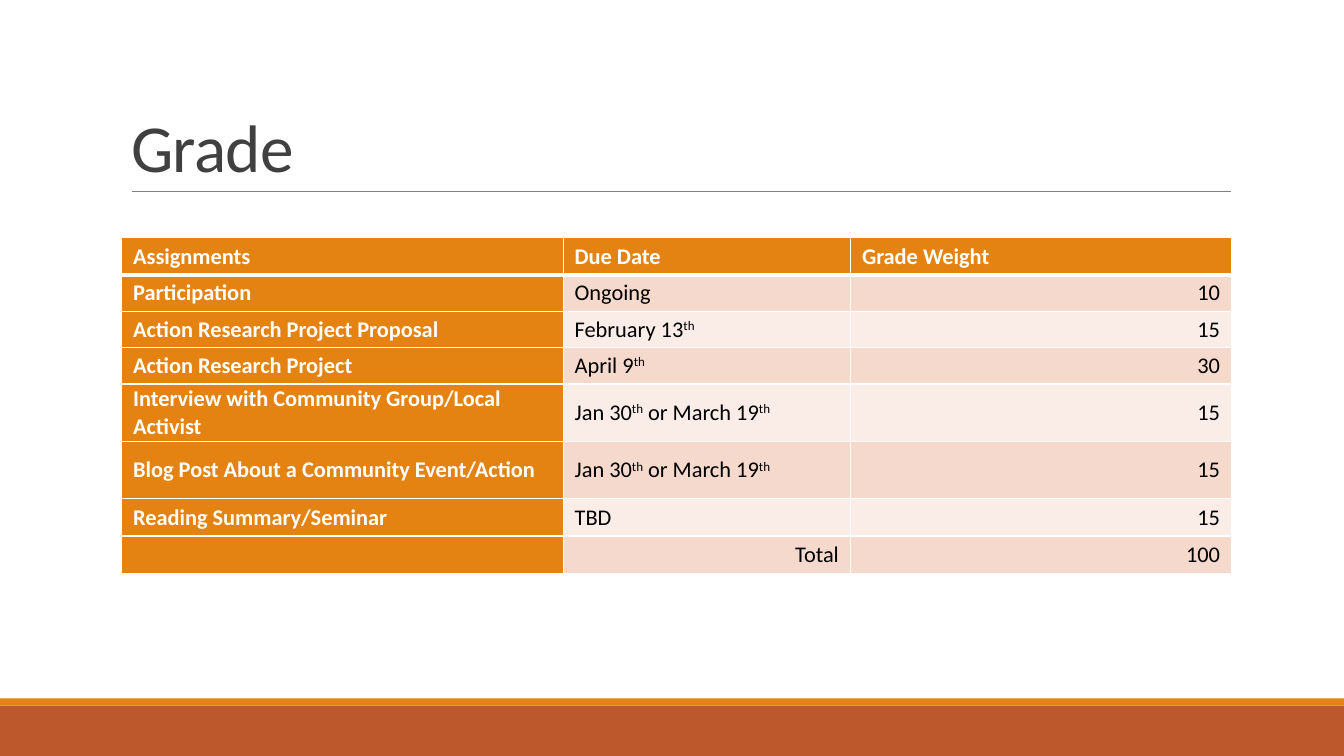
"""Build a slide with a table of assignments, due dates and grade weights."""
from dataclasses import dataclass

from lxml import etree
from pptx import Presentation
from pptx.dml.color import RGBColor
from pptx.enum.shapes import MSO_CONNECTOR, MSO_SHAPE
from pptx.enum.text import MSO_ANCHOR, MSO_AUTO_SIZE, PP_ALIGN
from pptx.oxml.ns import qn
from pptx.util import Inches, Pt

STRAIGHT = MSO_CONNECTOR.STRAIGHT
RECTANGLE = MSO_SHAPE.RECTANGLE
MIDDLE, BOTTOM = MSO_ANCHOR.MIDDLE, MSO_ANCHOR.BOTTOM
NO_AUTOFIT = MSO_AUTO_SIZE.NONE
LEFT, RIGHT = PP_ALIGN.LEFT, PP_ALIGN.RIGHT

ORANGE = RGBColor(0xE4, 0x83, 0x12)
RUST = RGBColor(0xBD, 0x58, 0x2C)
DARK_BAND = RGBColor(0xF5, 0xD9, 0xCC)
LIGHT_BAND = RGBColor(0xFA, 0xED, 0xE7)
TITLE_GREY = RGBColor(0x40, 0x40, 0x40)
RULE_GREY = RGBColor(0x80, 0x80, 0x80)
WHITE = RGBColor(0xFF, 0xFF, 0xFF)
BLACK = RGBColor(0x00, 0x00, 0x00)

FONT = "Calibri"
GRID_COLUMNS, GRID_ROWS = 133.3, 75
TABLE_COLUMNS = (43.8, 28.5, 37.8)
SUPERSCRIPT_MARK = "^"
TITLE_FORMAT = {"name": FONT, "size": Pt(48), "bold": False}
CELL_FORMAT = {"name": FONT, "size": Pt(16)}


@dataclass(frozen=True)
class Band:
    """A full-width strip, placed in grid rows."""
    top: float
    height: float
    color: RGBColor


@dataclass(frozen=True)
class GradeRow:
    """One table row, with its height in grid rows."""
    height: float
    assignment: str
    due: str
    weight: str
    due_align: PP_ALIGN = LEFT
    weight_align: PP_ALIGN = RIGHT


BANDS = (Band(70, 5, RUST), Band(69.3, 0.7, ORANGE))
GRADE_ROWS = (
    GradeRow(3.7, "Assignments", "Due Date", "Grade Weight", weight_align=LEFT),
    GradeRow(3.6, "Participation", "Ongoing", "10"),
    GradeRow(3.6, "Action Research Project Proposal", "February 13^th", "15"),
    GradeRow(3.6, "Action Research Project", "April 9^th", "30"),
    GradeRow(5.7, "Interview with Community Group/Local Activist",
             "Jan 30^th^ or March 19^th", "15"),
    GradeRow(5.7, "Blog Post About a Community Event/Action",
             "Jan 30^th^ or March 19^th", "15"),
    GradeRow(3.7, "Reading Summary/Seminar", "TBD", "15"),
    GradeRow(3.7, "", "Total", "100", due_align=RIGHT),
)


def grid(cells: float) -> int:
    """Turn a count of grid columns or rows into a length."""
    return Inches(cells / 10)


def apply_format(target, values: dict) -> None:
    """Set each named attribute on the target."""
    for name, value in values.items():
        setattr(target, name, value)


def add_band(slide, band: Band) -> None:
    """Draw one strip across the foot of the slide."""
    box = slide.shapes.add_shape(RECTANGLE, 0, grid(band.top),
                                 grid(GRID_COLUMNS), grid(band.height))
    box.shadow.inherit = False
    box.fill.solid()
    box.fill.fore_color.rgb = band.color
    box.line.fill.background()


def add_title_rule(slide) -> None:
    """Draw the thin line under the title."""
    rule = slide.shapes.add_connector(STRAIGHT, grid(13.1), grid(19),
                                      grid(122.1), grid(19))
    rule.line.color.rgb = RULE_GREY
    rule.line.width = Pt(0.5)
    etree.SubElement(rule._element.spPr, qn("a:effectLst"))


def format_title(title) -> None:
    """Place, fill and style the title placeholder."""
    apply_format(title, {"left": grid(12), "top": grid(3.1),
                         "width": grid(110), "height": grid(15.9)})
    frame = title.text_frame
    apply_format(frame, {"text": "Grade", "word_wrap": True,
                         "auto_size": NO_AUTOFIT, "vertical_anchor": BOTTOM})
    para = frame.paragraphs[0]
    apply_format(para, {"alignment": LEFT, "line_spacing": 0.85})
    span = para.runs[0]
    apply_format(span.font, TITLE_FORMAT)
    span.font.color.rgb = TITLE_GREY
    span._r.get_or_add_rPr().set("spc", "-50")


def add_border(cell, side: str, width: float) -> None:
    """Give one side of a cell a white border."""
    border = etree.SubElement(cell._tc.get_or_add_tcPr(), qn(f"a:ln{side}"),
                              w=str(Pt(width)))
    fill = etree.SubElement(border, qn("a:solidFill"))
    etree.SubElement(fill, qn("a:srgbClr"), val=str(WHITE))


def fill_cell(cell, text: str, align: PP_ALIGN, row: int, column: int) -> None:
    """Style a cell by its place in the table and write its text."""
    accent = row == 0 or column == 0
    for side in "LRTB":
        under_header = (row, side) in ((0, "B"), (1, "T"))
        add_border(cell, side, 3 if under_header else 1)
    cell.fill.solid()
    band_color = DARK_BAND if row % 2 else LIGHT_BAND
    cell.fill.fore_color.rgb = ORANGE if accent else band_color
    apply_format(cell, {"vertical_anchor": MIDDLE, "margin_top": 0,
                        "margin_bottom": 0, "margin_left": grid(1.15),
                        "margin_right": grid(1.15)})
    para = cell.text_frame.paragraphs[0]
    para.alignment = align
    for index, part in enumerate(text.split(SUPERSCRIPT_MARK)):
        if not part:
            continue
        span = para.add_run()
        span.text = part
        apply_format(span.font, {**CELL_FORMAT, "bold": accent})
        span.font.color.rgb = WHITE if accent else BLACK
        if index % 2:
            span._r.get_or_add_rPr().set("baseline", "30000")


def add_grade_table(slide) -> None:
    """Add the table and fill it row by row."""
    height = sum(entry.height for entry in GRADE_ROWS)
    table = slide.shapes.add_table(
        len(GRADE_ROWS), len(TABLE_COLUMNS), grid(12.05), grid(23.6),
        grid(sum(TABLE_COLUMNS)), grid(height)).table
    table.first_col = True
    for column, width in zip(table.columns, TABLE_COLUMNS):
        column.width = grid(width)
    for row, entry in enumerate(GRADE_ROWS):
        table.rows[row].height = grid(entry.height)
        contents = ((entry.assignment, LEFT), (entry.due, entry.due_align),
                    (entry.weight, entry.weight_align))
        for column, (text, align) in enumerate(contents):
            fill_cell(table.cell(row, column), text, align, row, column)


def main() -> None:
    """Build the deck and save it."""
    deck = Presentation()
    deck.slide_width, deck.slide_height = grid(GRID_COLUMNS), grid(GRID_ROWS)
    page = deck.slides.add_slide(deck.slide_layouts.get_by_name("Title Only"))
    for band in BANDS:
        add_band(page, band)
    add_title_rule(page)
    format_title(page.shapes.title)
    add_grade_table(page)
    deck.save("out.pptx")


if __name__ == "__main__":
    main()
